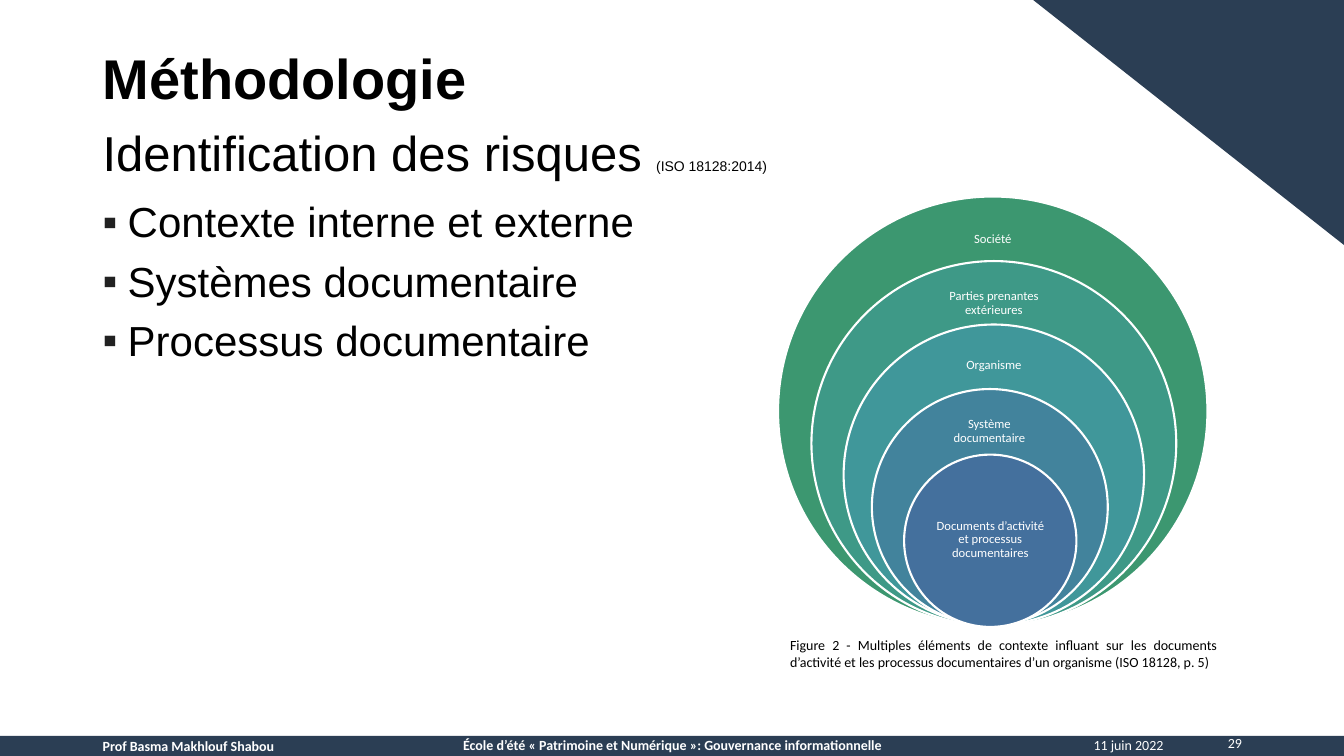
import pptx
import pptx.dml.color
import pptx.enum.shapes
import pptx.enum.text
import pptx.oxml.ns
import pptx.util
from lxml import etree

Pt = pptx.util.Pt
ALIGN = pptx.enum.text.PP_ALIGN
ANCHOR = pptx.enum.text.MSO_ANCHOR
SHAPE = pptx.enum.shapes.MSO_SHAPE
COLORS = {"navy": "2B3E54", "white": "FFFFFF", "black": "000000", "bullet": "212121"}


def add_shape(kind, box, fill, line=None):
    shape = slide.shapes.add_shape(kind, *map(Pt, box))
    shape.shadow.inherit = False
    shape.fill.solid()
    shape.fill.fore_color.rgb = pptx.dml.color.RGBColor.from_string(fill)
    if line:
        shape.line.color.rgb = pptx.dml.color.RGBColor.from_string(line)
        shape.line.width = Pt(1.5)
    else:
        shape.line.fill.background()
    return shape


def write(holder, box, lines, align=ALIGN.LEFT, anchor=ANCHOR.TOP, spacing=0.9,
          color="black", inset=None, bullet=None):
    """Place a text holder; each line is a list of (text, font settings)."""
    holder.left, holder.top, holder.width, holder.height = map(Pt, box)
    frame = holder.text_frame
    frame.word_wrap = True
    frame.auto_size = pptx.enum.text.MSO_AUTO_SIZE.NONE
    frame.vertical_anchor = anchor
    if inset is not None:
        for side in ("left", "top", "right", "bottom"):
            setattr(frame, "margin_" + side, Pt(inset))
    for number, runs in enumerate(lines):
        paragraph = frame.add_paragraph() if number else frame.paragraphs[0]
        paragraph.alignment = align
        paragraph.line_spacing = spacing
        paragraph.space_before = Pt(10 if number else 0)
        if bullet:
            props = paragraph._p.get_or_add_pPr()
            props.set("marL", str(Pt(18)))
            props.set("indent", str(-Pt(18)))
            bullet_color = etree.SubElement(props, pptx.oxml.ns.qn("a:buClr"))
            etree.SubElement(bullet_color, pptx.oxml.ns.qn("a:srgbClr"), val=COLORS["bullet"])
            etree.SubElement(props, pptx.oxml.ns.qn("a:buFont"), typeface="Arial")
            etree.SubElement(props, pptx.oxml.ns.qn("a:buChar"), char=bullet)
        for text, settings in runs:
            run = paragraph.add_run()
            run.text = text
            run.font.color.rgb = pptx.dml.color.RGBColor.from_string(COLORS[color])
            for key, value in settings.items():
                setattr(run.font, key, value)


presentation = pptx.Presentation()
presentation.slide_width, presentation.slide_height = Pt(960), Pt(540)
slide = presentation.slides.add_slide(presentation.slide_layouts[5])

# Corner and footer band
corner = add_shape(SHAPE.RIGHT_TRIANGLE, (738, 0, 222, 175), COLORS["navy"])
corner.rotation = 180
add_shape(SHAPE.RECTANGLE, (0, 525.6, 960, 14.4), COLORS["navy"])

# Footer texts
footer = [
    ("11 juin 2022", (766.8, 524.2, 71.3, 15.8), ALIGN.RIGHT, False),
    ("Prof Basma Makhlouf Shabou", (66.2, 524.5, 219.6, 15.5), ALIGN.JUSTIFY, True),
    ("29", (855.4, 522.7, 38.9, 17.3), ALIGN.RIGHT, False),
    ("École d’été « Patrimoine et Numérique »: Gouvernance informationnelle",
     (321.8, 524.2, 316.8, 15.8), ALIGN.CENTER, True),
]
for text, box, align, bold in footer:
    settings = {"name": "Calibri", "size": Pt(10), "bold": bold}
    write(slide.shapes.add_textbox(0, 0, 0, 0), box, [[(text, settings)]], align, color="white")

# Title and subtitle
write(slide.shapes.title, (66.2, 33.1, 828, 51.1),
      [[("Méthodologie", {"name": "Arial", "size": Pt(40), "bold": True})]])
write(slide.shapes.add_textbox(0, 0, 0, 0), (66.2, 88.6, 828, 47.5),
      [[("Identification des risques ", {"name": "Arial", "size": Pt(35)}),
        ("(ISO 18128:2014)", {"name": "Arial", "size": Pt(10)})]])

# Bulleted risk areas
risk_areas = ["Contexte interne et externe", "Systèmes documentaire", "Processus documentaire"]
write(slide.shapes.add_textbox(0, 0, 0, 0), (66.2, 140.4, 828, 329),
      [[(area, {"name": "Arial", "size": Pt(30)})] for area in risk_areas], bullet="▪")

# Nested context circles: label, fill, (left, top, diameter), label box
circles = [
    ("Société", "3C9770", (555.8, 140.4, 306.7), (651.6, 155.5, 115.2, 31)),
    ("Parties prenantes extérieures", "3E9987", (579.6, 186.5, 260.6),
     (653.8, 201.6, 112.3, 30.2)),
    ("Organisme", "40979A", (602.6, 231.8, 214.6), (654.5, 246.2, 110.9, 29.5)),
    ("Système documentaire", "42839C", (622.8, 277.9, 168.5), (661, 293, 91.4, 30.2)),
    ("Documents d’activité et processus documentaires", "44709D", (645.8, 324.7, 123.1),
     (663.8, 355, 87.1, 61.2)),
]
for label, fill, (left, top, diameter), box in circles:
    add_shape(SHAPE.OVAL, (left, top, diameter, diameter), fill, COLORS["white"])
    write(slide.shapes.add_textbox(0, 0, 0, 0), box,
          [[(label, {"name": "Calibri", "size": Pt(9)})]],
          ALIGN.CENTER, ANCHOR.MIDDLE, color="white", inset=5)

# Figure caption
caption = ("Figure 2 - Multiples éléments de contexte influant sur les documents d’activité "
           "et les processus documentaires d’un organisme (ISO 18128, p. 5)")
write(slide.shapes.add_textbox(0, 0, 0, 0), (557.3, 451.4, 319, 43.9),
      [[(caption, {"name": "Calibri", "size": Pt(10)})]], ALIGN.JUSTIFY, spacing=1.0)

presentation.save("out.pptx")
